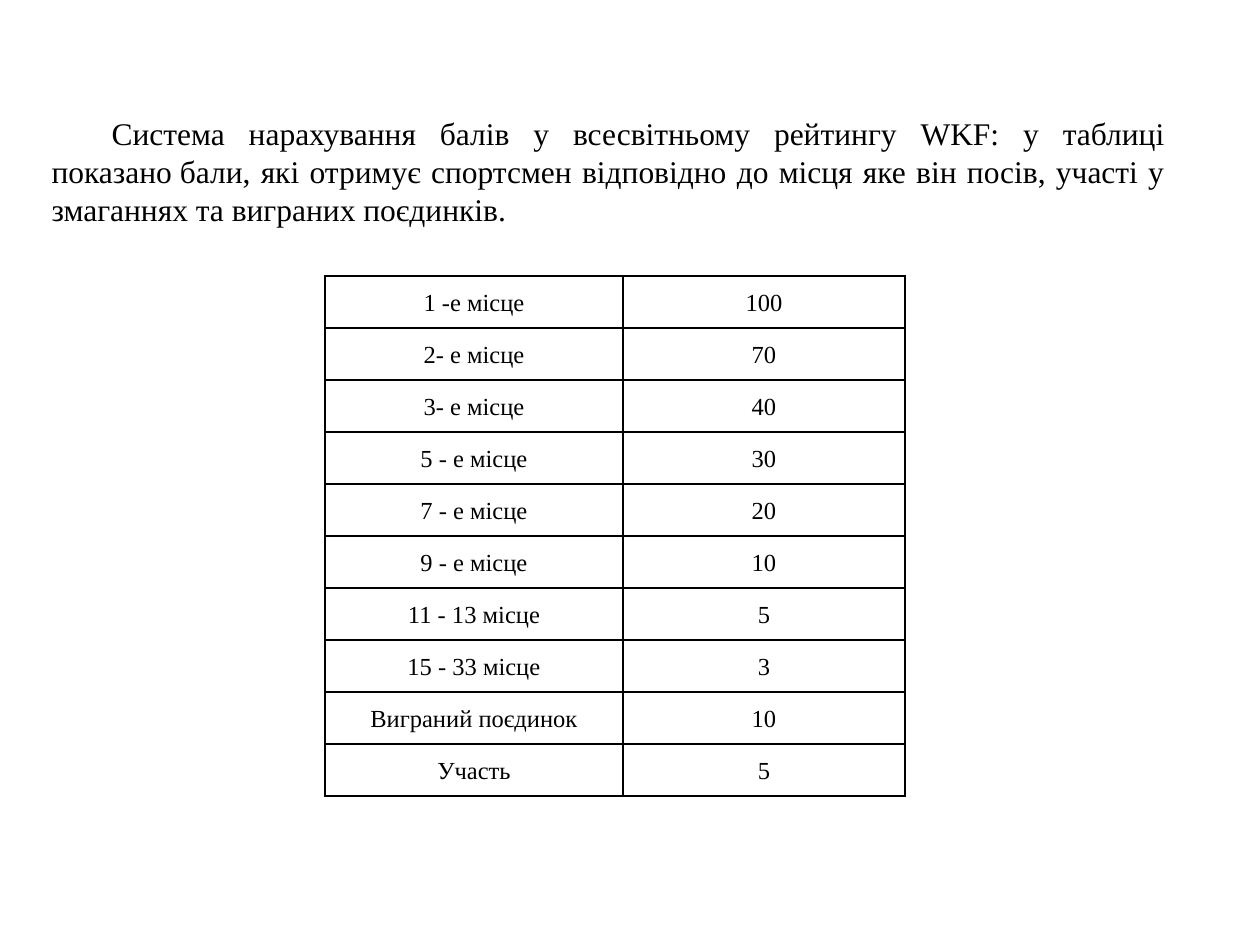
from lxml.etree import SubElement
from pptx import Presentation
from pptx.dml.color import RGBColor
from pptx.enum.text import MSO_ANCHOR, MSO_AUTO_SIZE, PP_ALIGN
from pptx.oxml.ns import qn
from pptx.util import Emu, Pt

BLACK = RGBColor(0, 0, 0)
FONT = "Times New Roman"
PX_PER_INCH = 126

INTRO = (
    "Система нарахування балів у всесвітньому рейтингу WKF: у таблиці показано бали, "
    "які отримує спортсмен відповідно до місця яке він посів, участі у змаганнях "
    "та виграних поєдинків."
)
POINTS = [
    ("1 -е місце", "100"),
    ("2- е місце", "70"),
    ("3- е місце", "40"),
    ("5 - е місце", "30"),
    ("7 - е місце", "20"),
    ("9 - е місце", "10"),
    ("11 - 13 місце", "5"),
    ("15 - 33 місце", "3"),
    ("Виграний поєдинок", "10"),
    ("Участь", "5"),
]
NO_BREAK_SPACE = chr(160)


def px(length):
    return Emu(round(length * 914400 / PX_PER_INCH))


def keep_together(text, phrase):
    return text.replace(phrase, phrase.replace(" ", NO_BREAK_SPACE))


class SlideBuilder:
    def __init__(self, page):
        self.page = page

    def style(self, para, size, align):
        para.alignment = align
        para.font.name = FONT
        para.font.size = Pt(size)
        para.font.color.rgb = BLACK

    def body(self, text, left, top, width, height, indent):
        box = self.page.placeholders[1]
        box.left, box.top, box.width, box.height = map(px, (left, top, width, height))
        frame = box.text_frame
        frame.text = text
        frame.auto_size = MSO_AUTO_SIZE.NONE
        frame.vertical_anchor = MSO_ANCHOR.TOP
        para = frame.paragraphs[0]
        para.space_before = Pt(0)
        properties = para._p.get_or_add_pPr()
        properties.set("marL", "0")
        properties.set("indent", str(px(indent)))
        SubElement(properties, qn("a:buNone"))
        self.style(para, 18, PP_ALIGN.JUSTIFY)

    def borders(self, cell):
        properties = cell._tc.get_or_add_tcPr()
        for side in ("a:lnL", "a:lnR", "a:lnT", "a:lnB"):
            line = SubElement(properties, qn(side), w=str(Pt(1)))
            fill = SubElement(line, qn("a:solidFill"))
            SubElement(fill, qn("a:srgbClr"), val=str(BLACK))

    def table(self, rows, left, top, widths, row_height):
        frame = self.page.shapes.add_table(
            len(rows), len(widths), px(left), px(top),
            px(sum(widths)), px(row_height * len(rows)),
        )
        table = frame.table
        table.first_row = False
        table.horz_banding = False
        for column, width in zip(table.columns, widths):
            column.width = px(width)
        for row, values in zip(table.rows, rows):
            row.height = px(row_height)
            for cell, value in zip(row.cells, values):
                self.cell(cell, value)

    def cell(self, cell, value):
        cell.text = value
        cell.margin_left = cell.margin_right = px(9)
        cell.margin_top = cell.margin_bottom = 0
        self.borders(cell)
        cell.fill.background()
        para = cell.text_frame.paragraphs[0]
        para.line_spacing = 1.5
        self.style(para, 14, PP_ALIGN.CENTER)


def main():
    deck = Presentation()
    deck.slide_width, deck.slide_height = px(1260), px(945)
    page = deck.slides.add_slide(deck.slide_layouts[1])
    title = page.shapes.title
    title.element.getparent().remove(title.element)
    builder = SlideBuilder(page)
    intro = keep_together(INTRO, "показано бали")
    builder.body(intro, 39, 108, 1139, 154, indent=60)
    builder.table(POINTS, 325, 276, (298, 282), 52)
    deck.save("out.pptx")


if __name__ == "__main__":
    main()
